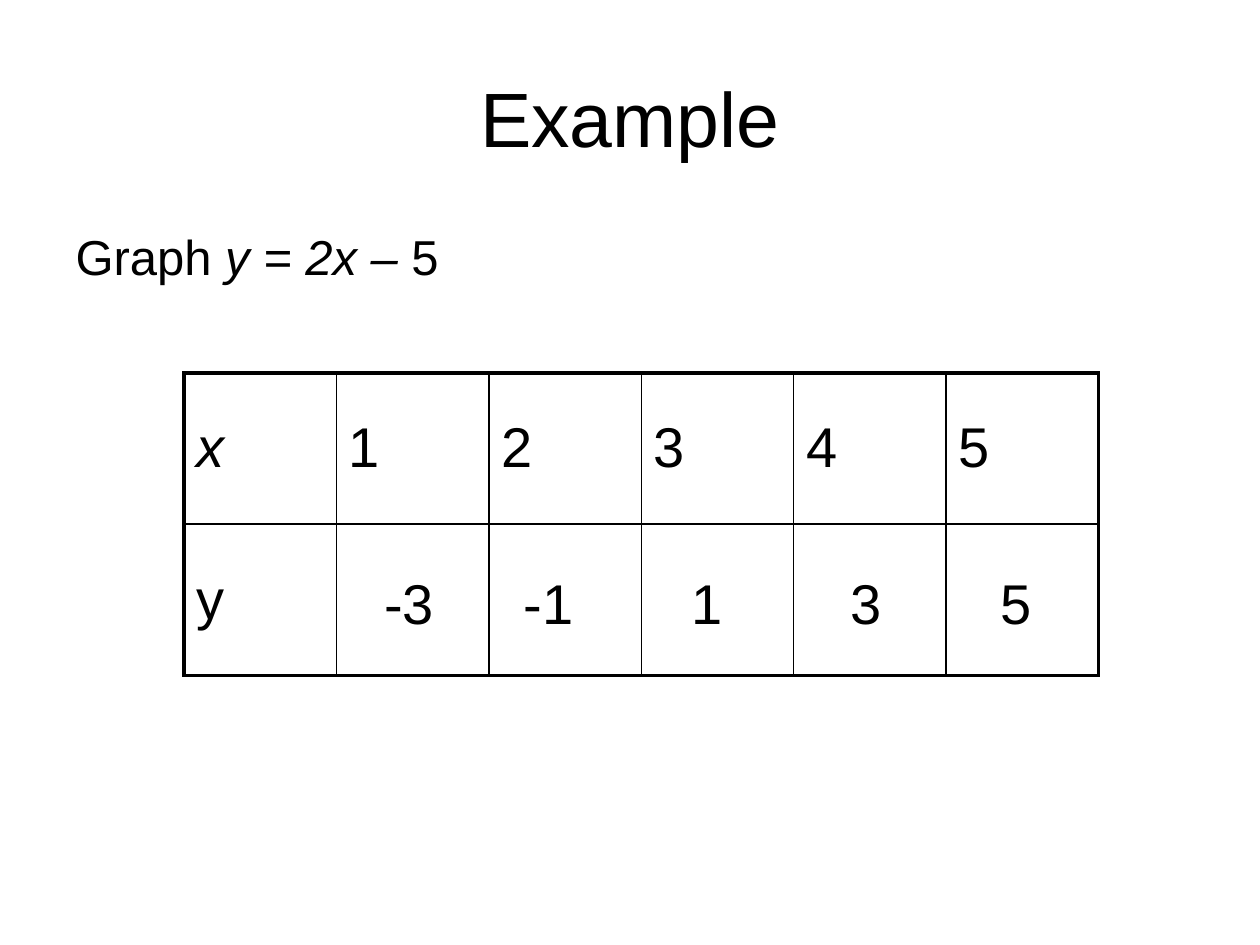
import pptx
import pptx.dml.color
import pptx.enum.text
import pptx.oxml
import pptx.oxml.ns
import pptx.util
from pptx.util import Inches

BLACK = pptx.dml.color.RGBColor(0, 0, 0)
THICK, THIN = 2.25, 1
X_ROW = ["x", "1", "2", "3", "4", "5"]
Y_VALUES = [("-3", 2.95), ("-1", 4.06), ("1", 5.39), ("3", 6.65), ("5", 7.84)]


def style(p, size):
    p.space_before = pptx.util.Pt(0)
    p.font.name = "Arial"
    p.font.size = pptx.util.Pt(size)
    p.font.color.rgb = BLACK


def set_borders(cell, left, right, top, bottom):
    """Give the cell solid black borders; widths are in points."""
    tc_pr = cell._tc.get_or_add_tcPr()
    for i, (side, width) in enumerate(zip("LRTB", (left, right, top, bottom))):
        line = pptx.oxml.parse_xml(
            f'<a:ln{side} {pptx.oxml.ns.nsdecls("a")} w="{pptx.util.Pt(width)}">'
            f'<a:solidFill><a:srgbClr val="{BLACK}"/></a:solidFill></a:ln{side}>')
        tc_pr.insert(i, line)


prs = pptx.Presentation()
prs.slide_width, prs.slide_height = Inches(10), Inches(7.5)
s = prs.slides.add_slide(prs.slide_layouts[1])

# Title
title = s.shapes.title
title.left, title.top = Inches(0.5), Inches(0.3)
title.width, title.height = Inches(9), Inches(1.25)
tf = title.text_frame
tf.text = "Example"
tf.vertical_anchor = pptx.enum.text.MSO_ANCHOR.MIDDLE
p = tf.paragraphs[0]
p.alignment = pptx.enum.text.PP_ALIGN.CENTER
style(p, 44)

# Equation
body = s.placeholders[1]
body.left, body.top = Inches(0.5), Inches(1.75)
body.width, body.height = Inches(4.42), Inches(4.95)
p = body.text_frame.paragraphs[0]
p_pr = p._p.get_or_add_pPr()
p_pr.set("marL", str(Inches(0.38)))
p_pr.set("indent", str(-Inches(0.38)))
p_pr.append(pptx.oxml.parse_xml(f'<a:buNone {pptx.oxml.ns.nsdecls("a")}/>'))
style(p, 28)
for text, italic in [("Graph ", False), ("y = 2x – ", True), ("5", False)]:
    r = p.add_run()
    r.text = text
    r.font.italic = italic

# Table of values
columns = len(X_ROW)
table = s.shapes.add_table(2, columns, Inches(1.46), Inches(2.96),
                           Inches(7.26), Inches(2.4)).table
table.first_row = table.horz_banding = False
for row, texts in enumerate([X_ROW, ["y"] + [""] * (columns - 1)]):
    for col, text in enumerate(texts):
        cell = table.cell(row, col)
        cell.fill.background()
        cell.vertical_anchor = pptx.enum.text.MSO_ANCHOR.MIDDLE
        cell.text = text
        p = cell.text_frame.paragraphs[0]
        style(p, 32)
        p.font.italic = text == "x"
        set_borders(cell,
                    left=THICK if col == 0 else THIN,
                    right=THICK if col == columns - 1 else THIN,
                    top=THICK if row == 0 else THIN,
                    bottom=THICK if row == 1 else THIN)

# The y values lie over the second row
for text, left in Y_VALUES:
    tf = s.shapes.add_textbox(Inches(left), Inches(4.46),
                              Inches(0.63), Inches(0.63)).text_frame
    tf.word_wrap = True
    tf.auto_size = pptx.enum.text.MSO_AUTO_SIZE.SHAPE_TO_FIT_TEXT
    tf.text = text
    style(tf.paragraphs[0], 32)

prs.save("out.pptx")
